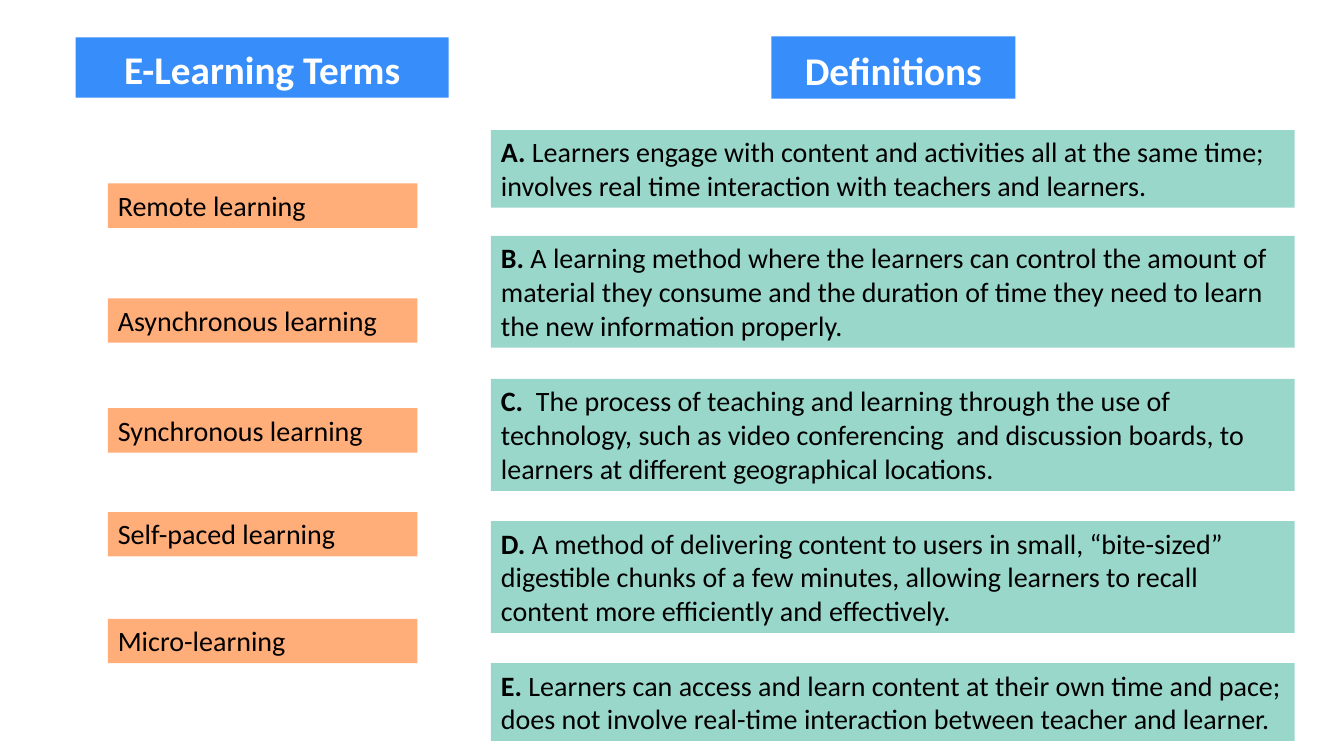
from dataclasses import dataclass

from pptx import Presentation
from pptx.dml.color import RGBColor
from pptx.enum.shapes import MSO_SHAPE
from pptx.enum.text import MSO_ANCHOR as Anchor, PP_ALIGN as Align
from pptx.slide import Slide
from pptx.util import Emu, Pt

PX = 9144  # EMU per px, 100 px to the inch


@dataclass(frozen=True)
class Theme:
    font: str = "Calibri"
    heading_fill: str = "378DFA"
    heading_text: str = "FFFFFF"
    term_fill: str = "FFAD79"
    definition_fill: str = "99D7CA"
    body_text: str = "000000"
    heading_size: int = 28
    body_size: int = 20


@dataclass(frozen=True)
class Box:
    left: int
    top: int
    width: int
    height: int
    text: str
    label: str = ""


THEME = Theme()

HEADINGS = [
    Box(75, 37, 370, 60, "E-Learning Terms"),
    Box(765, 36, 242, 62, "Definitions"),
]

TERMS = [
    Box(107, top, 307, 44, text)
    for top, text in [
        (182, "Remote learning"),
        (296, "Asynchronous learning"),
        (405, "Synchronous learning"),
        (508, "Self-paced learning"),
        (614, "Micro-learning"),
    ]
]

TWO_LINES, THREE_LINES = 77, 111
DEFINITIONS = [
    Box(487, top, 797, height, text, label)
    for top, height, label, text in [
        (129, TWO_LINES, "A. ",
         "Learners engage with content and activities all at the same time; "
         "involves real time interaction with teachers and learners."),
        (234, THREE_LINES, "B. ",
         "A learning method where the learners can control the amount of "
         "material they consume and the duration of time they need to learn "
         "the new information properly."),
        (376, THREE_LINES, "C.  ",
         "The process of teaching and learning through the use of technology, "
         "such as video conferencing  and discussion boards, to learners at "
         "different geographical locations."),
        (517, THREE_LINES, "D. ",
         "A method of delivering content to users in small, “bite-sized” "
         "digestible chunks of a few minutes, allowing learners to recall "
         "content more efficiently and effectively."),
        (658, TWO_LINES, "E. ",
         "Learners can access and learn content at their own time and pace; "
         "does not involve real-time interaction between teacher and learner."),
    ]
]


def add_box(s: Slide, box: Box, *, fill: str, color: str = THEME.body_text,
            size: int = THEME.body_size, bold: bool = False,
            align: Align = Align.LEFT, anchor: Anchor = Anchor.TOP,
            line_spacing: float = 1.0) -> None:
    """Draw a filled text box, with its label in bold before the text."""
    sp = s.shapes.add_shape(
        MSO_SHAPE.RECTANGLE,
        *(Emu(v * PX) for v in (box.left, box.top, box.width, box.height)))
    sp.shadow.inherit = False
    sp.fill.solid()
    sp.fill.fore_color.rgb = RGBColor.from_string(fill)
    sp.line.fill.background()
    tf = sp.text_frame
    tf.word_wrap = True
    tf.vertical_anchor = anchor
    p = tf.paragraphs[0]
    p.alignment = align
    p.line_spacing = line_spacing
    for text, is_bold in ((box.label, True), (box.text, bold)):
        if text:
            r = p.add_run()
            r.text = text
            r.font.name = THEME.font
            r.font.size = Pt(size)
            r.font.bold = is_bold
            r.font.color.rgb = RGBColor.from_string(color)


def main() -> None:
    prs = Presentation()
    prs.slide_width, prs.slide_height = Emu(1333 * PX), Emu(750 * PX)
    s = prs.slides.add_slide(prs.slide_layouts[6])
    for heading in HEADINGS:
        add_box(s, heading, fill=THEME.heading_fill, color=THEME.heading_text,
                size=THEME.heading_size, bold=True, align=Align.CENTER,
                anchor=Anchor.BOTTOM, line_spacing=0.9)
    for definition in DEFINITIONS:
        add_box(s, definition, fill=THEME.definition_fill)
    for term in TERMS:
        add_box(s, term, fill=THEME.term_fill)
    prs.save("out.pptx")


if __name__ == "__main__":
    main()
